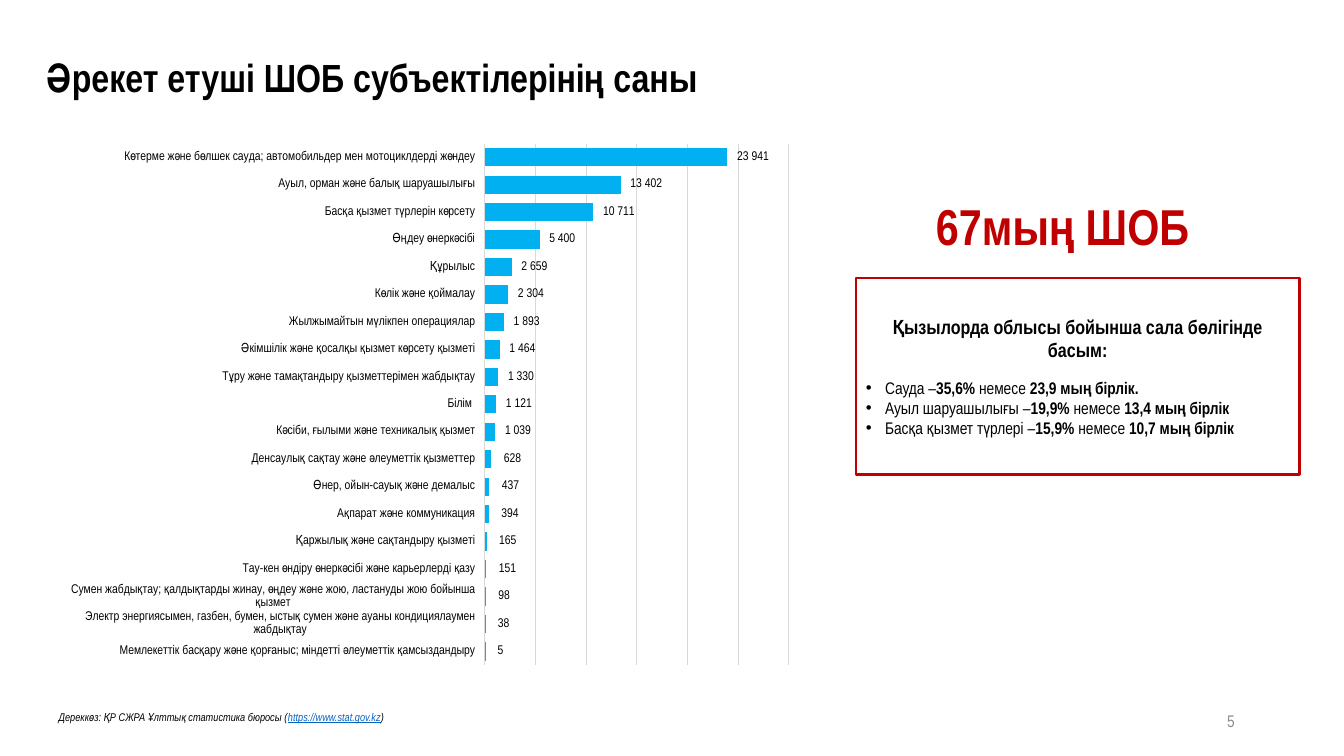
from dataclasses import dataclass

from lxml import etree
from pptx import Presentation
from pptx.chart.data import CategoryChartData
from pptx.dml.color import RGBColor
from pptx.enum.chart import XL_CHART_TYPE as ChartType, XL_LABEL_POSITION as LabelPos
from pptx.enum.chart import XL_TICK_LABEL_POSITION as TickLabels, XL_TICK_MARK as Tick
from pptx.enum.shapes import MSO_SHAPE as Shape
from pptx.enum.text import MSO_ANCHOR as Anchor, PP_ALIGN as Align
from pptx.oxml import parse_xml
from pptx.oxml.ns import nsdecls, qn
from pptx.util import Inches, Pt

COLS, ROWS = 160, 90


@dataclass(frozen=True)
class Theme:
    """Colours, font and type sizes of the slide."""
    font: str = "Arial Narrow"
    text: str = "000000"
    accent: str = "C00000"
    bar: str = "00B0F0"
    grid: str = "D9D9D9"
    muted: str = "8C8C8C"
    link: str = "0563C1"
    title: int = 28
    headline: int = 36
    lead: int = 14
    body: int = 12
    label: int = 9
    note: int = 8


T = Theme()
NUMBER = r"###\ ###\ ###\ ##0"
SECTORS = [
    ("Көтерме және бөлшек сауда; автомобильдер мен мотоциклдерді жөндеу", 23941),
    ("Ауыл, орман және балық шаруашылығы", 13402),
    ("Басқа қызмет түрлерін көрсету", 10711),
    ("Өңдеу өнеркәсібі", 5400),
    ("Құрылыс", 2659),
    ("Көлік және қоймалау", 2304),
    ("Жылжымайтын мүлікпен операциялар", 1893),
    ("Әкімшілік және қосалқы қызмет көрсету қызметі", 1464),
    ("Тұру және тамақтандыру қызметтерімен жабдықтау", 1330),
    ("Білім ", 1121),
    ("Кәсіби, ғылыми және техникалық қызмет", 1039),
    ("Денсаулық сақтау және әлеуметтік қызметтер", 628),
    ("Өнер, ойын-сауық және демалыс", 437),
    ("Ақпарат және коммуникация", 394),
    ("Қаржылық және сақтандыру қызметі", 165),
    ("Тау-кен өндіру өнеркәсібі және карьерлерді қазу", 151),
    ("Сумен жабдықтау; қалдықтарды жинау, өңдеу және жою, ластануды жою бойынша қызмет", 98),
    ("Электр энергиясымен, газбен, бумен, ыстық сумен және ауаны кондициялаумен жабдықтау", 38),
    ("Мемлекеттік басқару және қорғаныс; міндетті әлеуметтік қамсыздандыру", 5),
]
LEADERS = [
    ("Сауда –", "35,6%", "23,9 мың бірлік."),
    ("Ауыл шаруашылығы –", "19,9%", "13,4 мың бірлік"),
    ("Басқа қызмет түрлері –", "15,9%", "10,7 мың бірлік"),
]


def rgb(color):
    """Turn a hex string into a colour."""
    return RGBColor.from_string(color)


def style(font, size, color=T.text, bold=False, italic=False, underline=False):
    """Apply the theme font and the given format."""
    font.name, font.size = T.font, Pt(size)
    font.bold, font.italic, font.underline = bold, italic, underline
    font.color.rgb = rgb(color)


def write(p, text, align=None, **fmt):
    """Add a formatted run to a paragraph."""
    if align is not None:
        p.alignment = align
    r = p.add_run()
    r.text = text
    style(r.font, **fmt)


def text_box(slide, box, anchor=Anchor.TOP):
    """Add a wrapping text box and return its first paragraph."""
    tf = slide.shapes.add_textbox(*box).text_frame
    tf.word_wrap, tf.vertical_anchor = True, anchor
    return tf.paragraphs[0]


def add_bullet(p):
    """Give a paragraph a round bullet with a hanging indent."""
    ppr = p._p.get_or_add_pPr()
    indent = Inches(0.19)
    ppr.set("marL", str(indent))
    ppr.set("indent", str(-indent))
    etree.SubElement(ppr, qn("a:buFont")).set("typeface", "Arial")
    etree.SubElement(ppr, qn("a:buChar")).set("char", "•")


def add_title(slide, box):
    """Place the slide title."""
    p = text_box(slide, box, Anchor.MIDDLE)
    p.line_spacing = 0.9
    write(p, "Әрекет етуші ШОБ субъектілерінің саны", size=T.title, bold=True)


def add_sector_chart(slide, box):
    """Place the bar chart of businesses by sector."""
    data = CategoryChartData(number_format=NUMBER)
    names, counts = zip(*reversed(SECTORS))
    data.categories = names
    data.add_series("ШОБ", counts)
    chart = slide.shapes.add_chart(ChartType.BAR_CLUSTERED, *box, data).chart
    chart.has_legend = chart.has_title = False
    style(chart.font, T.label)

    cat, val = chart.category_axis, chart.value_axis
    cat.major_tick_mark = cat.minor_tick_mark = Tick.NONE
    cat.tick_label_position = TickLabels.LOW
    style(cat.tick_labels.font, T.label)
    val.visible = False
    val.minimum_scale, val.maximum_scale, val.major_unit = 0, 30000, 5000
    for line in (cat.format.line, val.major_gridlines.format.line):
        line.color.rgb, line.width = rgb(T.grid), Pt(0.75)

    plot = chart.plots[0]
    plot.gap_width, plot.vary_by_categories = 50, False
    bars = plot.series[0].format.fill
    bars.solid()
    bars.fore_color.rgb = rgb(T.bar)
    plot.has_data_labels = True
    labels = plot.data_labels
    labels.show_value, labels.position = True, LabelPos.OUTSIDE_END
    labels.number_format, labels.number_format_is_linked = NUMBER, False
    style(labels.font, T.label)

    area = chart._chartSpace.chart.plotArea
    for old in area.findall(qn("c:layout")):
        area.remove(old)
    shares = {"x": 0.57, "y": 0.02, "w": 0.41, "h": 0.96}
    modes = "".join(f'<c:{k}Mode val="edge"/>' for k in "xy")
    sizes = "".join(f'<c:{k} val="{v}"/>' for k, v in shares.items())
    area.insert(0, parse_xml(
        f'<c:layout {nsdecls("c")}><c:manualLayout><c:layoutTarget val="inner"/>'
        f"{modes}{sizes}</c:manualLayout></c:layout>"))


def add_headline(slide, box):
    """Place the total number of businesses."""
    write(text_box(slide, box), "67мың ШОБ", align=Align.CENTER,
          size=T.headline, color=T.accent, bold=True)


def add_leaders(slide, box):
    """Place the framed list of leading sectors."""
    sp = slide.shapes.add_shape(Shape.RECTANGLE, *box)
    sp.shadow.inherit = False
    sp.fill.background()
    sp.line.color.rgb, sp.line.width = rgb(T.accent), Pt(2)
    tf = sp.text_frame
    tf.word_wrap, tf.vertical_anchor = True, Anchor.MIDDLE
    write(tf.paragraphs[0], "Қызылорда облысы бойынша сала бөлігінде басым:",
          align=Align.CENTER, size=T.lead, bold=True)
    for i, (sector, share, count) in enumerate(LEADERS):
        p = tf.add_paragraph()
        p.space_before = Pt(0 if i else 11)
        add_bullet(p)
        for text, bold in ((sector, False), (share, True), (" немесе ", False), (count, True)):
            write(p, text, align=Align.LEFT, size=T.body, bold=bold)


def add_source(slide, box):
    """Place the data source line."""
    p = text_box(slide, box)
    write(p, "Дереккөз: ҚР СЖРА Ұлттық статистика бюросы (", size=T.note, italic=True)
    write(p, "https://www.stat.gov.kz", size=T.note, color=T.link, italic=True, underline=True)
    write(p, ")", size=T.note, italic=True)


def add_page_number(slide, box):
    """Place the page number."""
    write(text_box(slide, box, Anchor.MIDDLE), "5", size=T.body, color=T.muted)


def main():
    """Build and save the slide."""
    prs = Presentation()
    prs.slide_width, prs.slide_height = Inches(13.33), Inches(7.5)
    slide = prs.slides.add_slide(prs.slide_layouts[6])
    col, row = prs.slide_width / COLS, prs.slide_height / ROWS
    regions = [
        (add_title, (4.4, 3.6, 105.4, 11.9)),
        (add_sector_chart, (7.4, 15.8, 88.3, 64.7)),
        (add_headline, (104.8, 22.6, 43.4, 8.5)),
        (add_leaders, (101.9, 33.1, 52.8, 23.4)),
        (add_source, (5.8, 84, 100.8, 2.9)),
        (add_page_number, (144.9, 83.4, 8.3, 4.8)),
    ]
    for add, (x, y, w, h) in regions:
        add(slide, [round(n) for n in (x * col, y * row, w * col, h * row)])
    prs.save("out.pptx")


if __name__ == "__main__":
    main()
